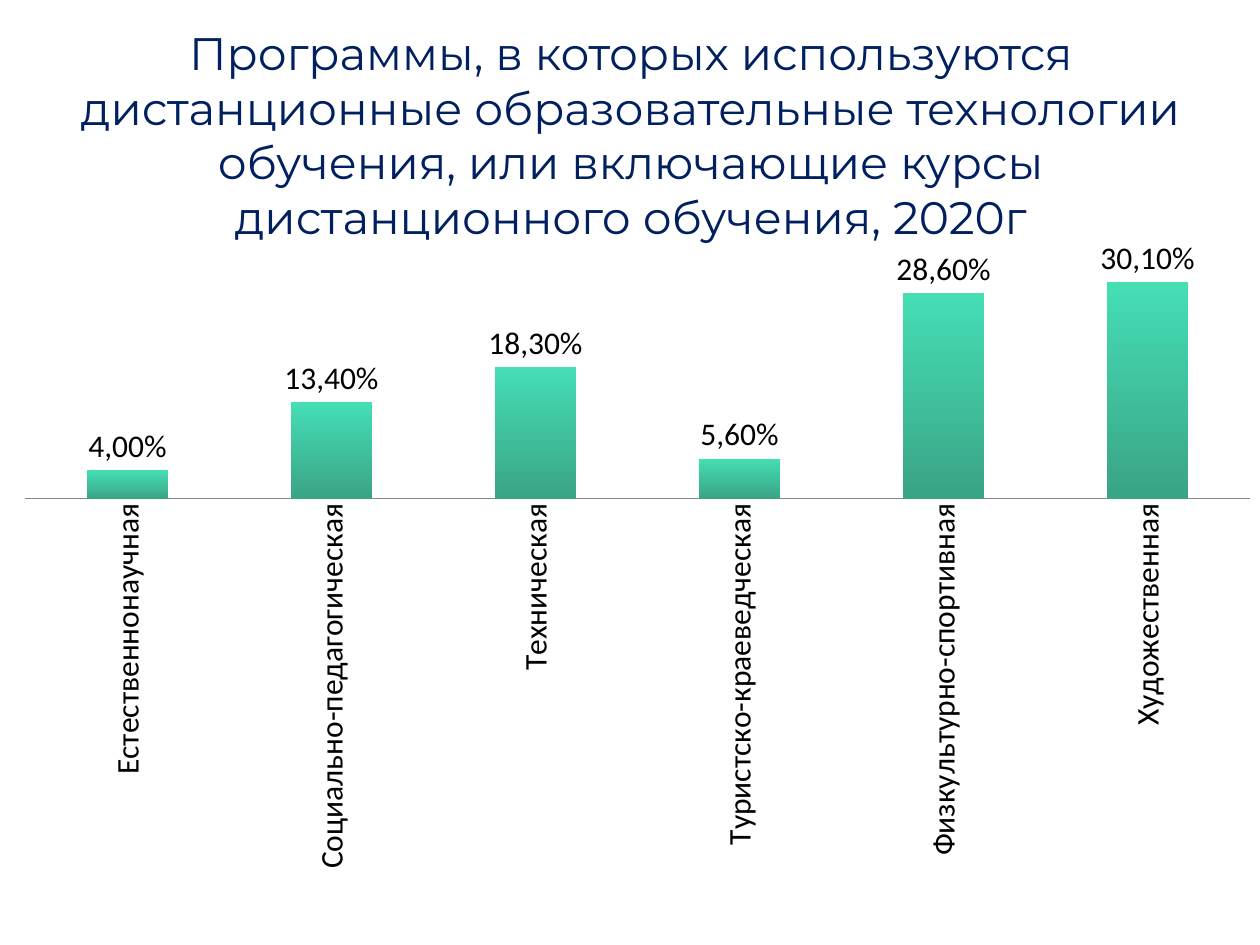
from lxml import etree
from pptx import Presentation
from pptx.chart.data import CategoryChartData
from pptx.dml.color import RGBColor
from pptx.enum.chart import XL_CHART_TYPE, XL_LABEL_POSITION, XL_TICK_MARK
from pptx.enum.text import MSO_ANCHOR, MSO_AUTO_SIZE, PP_ALIGN
from pptx.oxml.ns import qn
from pptx.util import Inches, Pt

COLUMN_CLUSTERED = XL_CHART_TYPE.COLUMN_CLUSTERED
OUTSIDE_END = XL_LABEL_POSITION.OUTSIDE_END
NO_TICKS = XL_TICK_MARK.NONE
MIDDLE = MSO_ANCHOR.MIDDLE
NO_AUTOFIT = MSO_AUTO_SIZE.NONE
CENTER = PP_ALIGN.CENTER

NAVY = RGBColor(0x00, 0x20, 0x60)
BLACK = RGBColor(0x00, 0x00, 0x00)
GRAY = RGBColor(0x86, 0x86, 0x86)
GREEN_TOP = RGBColor(0x45, 0xDE, 0xB5)
GREEN_BOTTOM = RGBColor(0x3A, 0xA4, 0x86)

PROGRAM_SHARES = {
    "Естественнонаучная": 0.04,
    "Социально-педагогическая": 0.134,
    "Техническая": 0.183,
    "Туристско-краеведческая": 0.056,
    "Физкультурно-спортивная": 0.286,
    "Художественная": 0.301,
}
PLOT_LAYOUT = {
    "layoutTarget": "inner", "xMode": "edge", "yMode": "edge",
    "x": "0.02", "y": "0.02", "w": "0.96", "h": "0.39",
}


def write_text(text_frame, text, font_name, size, color):
    paragraph = text_frame.paragraphs[0]
    paragraph.alignment = CENTER
    run = paragraph.add_run()
    run.text = text
    run.font.name = font_name
    run.font.size = Pt(size)
    run.font.color.rgb = color


presentation = Presentation()
presentation.slide_width = Inches(10)
presentation.slide_height = Inches(7.5)
slide = presentation.slides.add_slide(presentation.slide_layouts[5])

title = slide.shapes.title
title.left, title.top = Inches(0.51), Inches(0.13)
title.width, title.height = Inches(9), Inches(1.87)
title.text_frame.word_wrap = True
title.text_frame.auto_size = NO_AUTOFIT
title.text_frame.vertical_anchor = MIDDLE
write_text(
    title.text_frame,
    "Программы, в которых используются дистанционные образовательные "
    "технологии обучения, или включающие курсы дистанционного обучения, 2020г",
    font_name="Montserrat", size=26, color=NAVY,
)

chart_data = CategoryChartData(number_format="0.00%")
chart_data.categories = list(PROGRAM_SHARES)
chart_data.add_series("Series 1", list(PROGRAM_SHARES.values()))
chart = slide.shapes.add_chart(
    COLUMN_CLUSTERED, Inches(0), Inches(1.86), Inches(10.12), Inches(5.12), chart_data
).chart
chart.has_title = False
chart.has_legend = False
chart.font.name = "Calibri"
chart.font.size = Pt(18)
chart.font.color.rgb = BLACK

value_axis = chart.value_axis
value_axis.visible = False
value_axis.has_major_gridlines = False
value_axis.minimum_scale = 0
value_axis.maximum_scale = 0.35
value_axis.tick_labels.number_format = "0.00%"
value_axis.tick_labels.number_format_is_linked = False

category_axis = chart.category_axis
category_axis.major_tick_mark = NO_TICKS
category_axis.minor_tick_mark = NO_TICKS
category_axis.format.line.color.rgb = GRAY
category_axis.format.line.width = Pt(0.75)
category_axis.tick_labels.font.size = Pt(18)
category_text = category_axis._element.find(qn("c:txPr")).find(qn("a:bodyPr"))
category_text.set("rot", "-5400000")
category_text.set("vert", "horz")

plot_area = chart._chartSpace.chart.plotArea
layout = plot_area.find(qn("c:layout"))
if layout is None:
    layout = etree.Element(qn("c:layout"))
    plot_area.insert(0, layout)
manual_layout = etree.SubElement(layout, qn("c:manualLayout"))
for setting, value in PLOT_LAYOUT.items():
    etree.SubElement(manual_layout, qn(f"c:{setting}")).set("val", value)

plot = chart.plots[0]
plot.gap_width = 150
plot.overlap = -25
plot.vary_by_categories = False

series = plot.series[0]
bar_fill = series.format.fill
bar_fill.gradient()
bar_fill.gradient_angle = 270
for stop, color in zip(bar_fill.gradient_stops, (GREEN_TOP, GREEN_BOTTOM)):
    stop.color.rgb = color

series.data_labels.show_value = True
series.data_labels.number_format = "0.00%"
series.data_labels.number_format_is_linked = False
series.data_labels.position = OUTSIDE_END
for index, share in enumerate(PROGRAM_SHARES.values()):
    label = series.points[index].data_label
    write_text(
        label.text_frame, f"{share:.2%}".replace(".", ","),
        font_name="Calibri", size=18, color=BLACK,
    )
    label.position = OUTSIDE_END

presentation.save("out.pptx")
